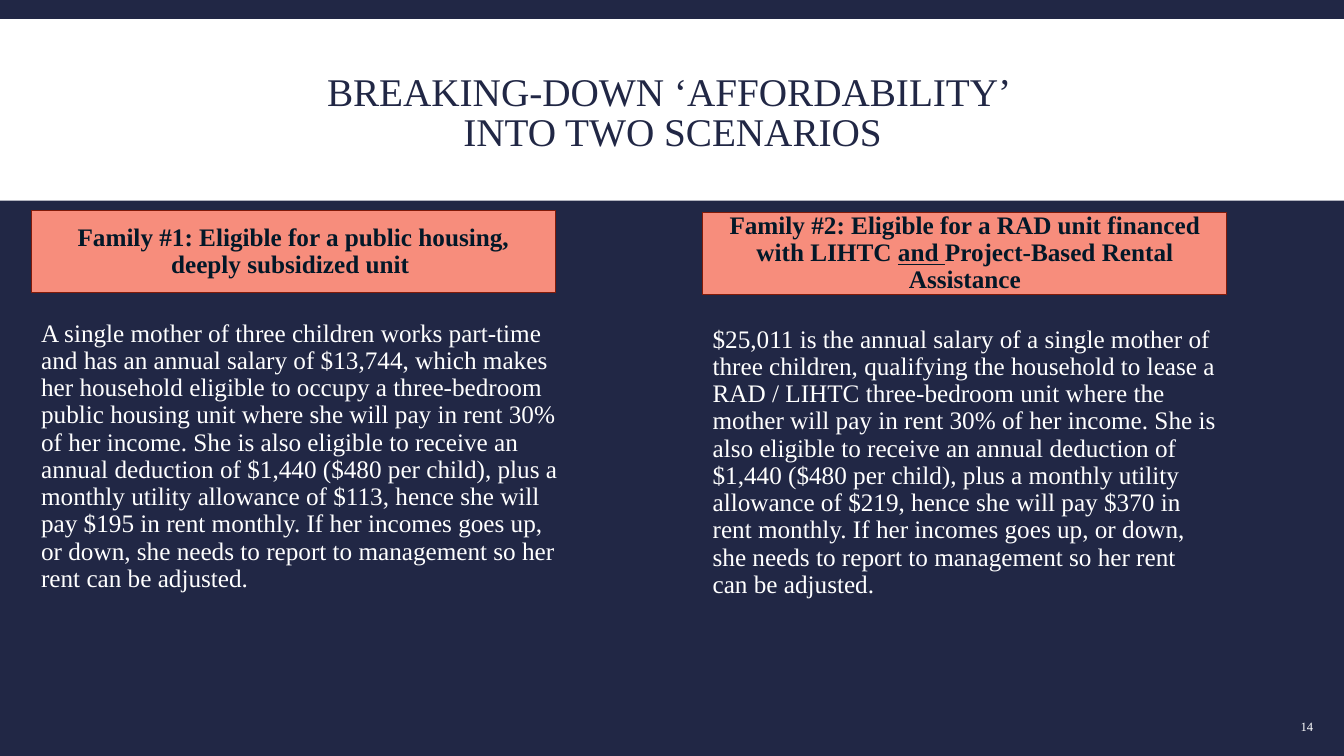
from dataclasses import dataclass

from pptx import Presentation
from pptx import util as u
from pptx.dml.color import RGBColor
from pptx.enum import shapes, text


@dataclass(frozen=True)
class Theme:
    navy: RGBColor = RGBColor.from_string("212745")
    white: RGBColor = RGBColor.from_string("FFFFFF")
    coral: RGBColor = RGBColor.from_string("F78D7C")
    rust: RGBColor = RGBColor.from_string("821A08")
    ink: RGBColor = RGBColor.from_string("031828")
    font: str = "Times New Roman"
    title_size: int = 28
    body_size: int = 18
    number_size: int = 9


THEME = Theme()
MIDDLE = text.MSO_ANCHOR.MIDDLE
CENTER = text.PP_ALIGN.CENTER

# Each family: left, heading top, heading spans (words, underlined),
# story top, story width, story height, story
FAMILIES = [
    (0.31, 2.09,
     [("Family #1: Eligible for a public housing, deeply subsidized unit ", False)],
     3.13, 5.33, 4.02,
     "A single mother of three children works part-time and has an annual salary of "
     "$13,744, which makes her household eligible to occupy a three-bedroom public "
     "housing unit where she will pay in rent 30% of her income. She is also eligible "
     "to receive an annual deduction of $1,440 ($480 per child), plus a monthly utility "
     "allowance of $113, hence she will pay $195 in rent monthly. If her incomes goes "
     "up, or down, she needs to report to management so her rent can be adjusted."),
    (6.97, 2.11,
     [("Family #2: Eligible for a RAD unit financed with LIHTC ", False),
      ("and ", True),
      ("Project-Based Rental Assistance", False)],
     3.19, 5.2, 3.9,
     "$25,011 is the annual salary of a single mother of three children, qualifying the "
     "household to lease a RAD / LIHTC three-bedroom unit where the mother will pay in "
     "rent 30% of her income. She is also eligible to receive an annual deduction of "
     "$1,440 ($480 per child), plus a monthly utility allowance of $219, hence she will "
     "pay $370 in rent monthly. If her incomes goes up, or down, she needs to report to "
     "management so her rent can be adjusted."),
]


def add_panel(page, left, top, width, height, fill, line=None):
    panel = page.shapes.add_shape(
        shapes.MSO_SHAPE.RECTANGLE,
        u.Inches(left), u.Inches(top), u.Inches(width), u.Inches(height))
    panel.shadow.inherit = False
    panel.fill.solid()
    panel.fill.fore_color.rgb = fill
    if line is None:
        panel.line.fill.background()
    else:
        panel.line.color.rgb = line
        panel.line.width = u.Pt(0.75)
    return panel


def add_text_box(page, left, top, width, height):
    return page.shapes.add_textbox(
        u.Inches(left), u.Inches(top), u.Inches(width), u.Inches(height))


def style_text(box, size, color, anchor=text.MSO_ANCHOR.TOP,
               align=text.PP_ALIGN.LEFT, bold=False):
    """Style the only paragraph of a box and return it."""
    frame = box.text_frame
    frame.word_wrap = True
    frame.vertical_anchor = anchor
    para = frame.paragraphs[0]
    para.alignment = align
    para.font.name = THEME.font
    para.font.size = u.Pt(size)
    para.font.color.rgb = color
    para.font.bold = bold
    return para


def space_body(para):
    para.line_spacing = 0.9
    para.space_before = u.Pt(12)
    para.space_after = u.Pt(2)


def add_title(page, words):
    add_panel(page, 0, 0.19, 13.33, 1.8, THEME.white)
    box = add_text_box(page, 1.32, 0.31, 10.7, 1.65)
    para = style_text(box, THEME.title_size, THEME.navy, MIDDLE, CENTER)
    para.line_spacing = 0.85
    para.text = words


def add_heading(page, left, top, spans):
    panel = add_panel(page, left, top, 5.2, 0.81, THEME.coral, THEME.rust)
    para = style_text(panel, THEME.body_size, THEME.ink, MIDDLE, CENTER, bold=True)
    space_body(para)
    for words, underlined in spans:
        span = para.add_run()
        span.text = words
        span.font.underline = underlined


def add_story(page, left, top, width, height, words):
    box = add_text_box(page, left, top, width, height)
    para = style_text(box, THEME.body_size, THEME.white)
    space_body(para)
    para.text = words


def add_page_number(page, number):
    box = add_text_box(page, 12.85, 7.06, 0.36, 0.29)
    para = style_text(box, THEME.number_size, THEME.white, MIDDLE)
    box.text_frame.margin_left = u.Inches(0.05)
    para.text = number


def main():
    deck = Presentation()
    deck.slide_width, deck.slide_height = u.Inches(13.33), u.Inches(7.5)
    page = deck.slides.add_slide(deck.slide_layouts[6])
    page.background.fill.solid()
    page.background.fill.fore_color.rgb = THEME.navy

    # Title band
    add_title(page, "BREAKING-DOWN ‘AFFORDABILITY’ \vINTO TWO SCENARIOS")

    # One column per family
    for left, heading_top, spans, story_top, width, height, story in FAMILIES:
        add_heading(page, left, heading_top, spans)
        add_story(page, left, story_top, width, height, story)

    # Footer
    add_page_number(page, "14")
    deck.save("out.pptx")


if __name__ == "__main__":
    main()
